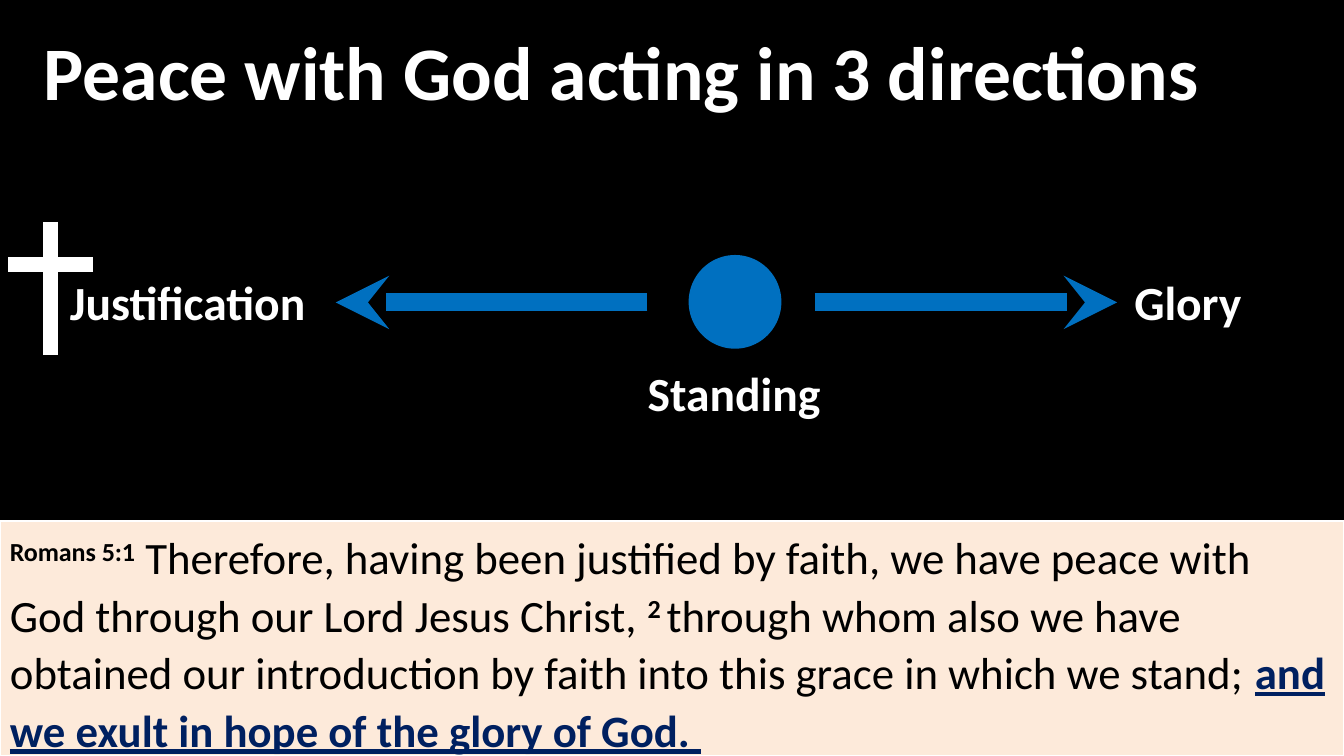
from lxml.etree import SubElement
from pptx import Presentation
from pptx.dml.color import RGBColor
from pptx.enum.shapes import MSO_CONNECTOR, MSO_SHAPE
from pptx.enum.text import MSO_ANCHOR, PP_ALIGN
from pptx.oxml.ns import qn
from pptx.util import Inches, Pt

BLACK = RGBColor(0x00, 0x00, 0x00)
WHITE = RGBColor(0xFF, 0xFF, 0xFF)
BLUE = RGBColor(0x00, 0x70, 0xC0)
NAVY = RGBColor(0x00, 0x20, 0x60)
PEACH = RGBColor(0xFD, 0xEA, 0xDA)


def add_run(paragraph, text, size, color, superscript=False, **font_format):
    run = paragraph.add_run()
    run.text = text
    run.font.color.rgb = color
    for name, value in {"name": "Calibri", "size": Pt(size), **font_format}.items():
        setattr(run.font, name, value)
    if superscript:
        run.font._element.set("baseline", "30000")


def add_line(start, end, color, width, arrow=False):
    line = slide.shapes.add_connector(
        MSO_CONNECTOR.STRAIGHT, *(Inches(v) for v in (*start, *end)))
    line.line.color.rgb = color
    line.line.width = Pt(width)
    if arrow:
        SubElement(line.line._get_or_add_ln(), qn("a:tailEnd"), type="stealth")
    SubElement(line._element.spPr, qn("a:effectLst"))


prs = Presentation()
prs.slide_width, prs.slide_height = Inches(13.33), Inches(7.5)
slide = prs.slides.add_slide(prs.slide_layouts[6])
slide.background.fill.solid()
slide.background.fill.fore_color.rgb = BLACK

# Title
title = slide.shapes.add_textbox(Inches(0), Inches(0.25), Inches(12.33), Inches(0.9))
title.text_frame.word_wrap = True
title.text_frame.vertical_anchor = MSO_ANCHOR.MIDDLE
heading = title.text_frame.paragraphs[0]
heading.alignment = PP_ALIGN.CENTER
add_run(heading, "Peace with God acting in 3 directions", 54, WHITE, bold=True)

# Scripture panel
panel = slide.shapes.add_shape(
    MSO_SHAPE.RECTANGLE, Inches(0), Inches(5.17), Inches(13.33), Inches(2.33))
panel.shadow.inherit = False
panel.fill.solid()
panel.fill.fore_color.rgb = PEACH
panel.line.color.rgb = WHITE
panel.line.width = Pt(1.5)
panel.text_frame.word_wrap = True
panel.text_frame.vertical_anchor = MSO_ANCHOR.TOP
verse = panel.text_frame.paragraphs[0]
verse.alignment = PP_ALIGN.LEFT
verse.line_spacing = 1.07
for text, color, style in [
    ("Romans 5:1", BLACK, {"superscript": True, "bold": True}),
    (" Therefore, having been justified by faith, we have peace with God "
     "through our Lord Jesus Christ, ", BLACK, {"bold": False}),
    ("2 ", BLACK, {"superscript": True, "bold": True}),
    ("through whom also we have obtained our introduction by faith into this "
     "grace in which we stand; ", BLACK, {"bold": False}),
    ("and we exult in hope of the glory of God. ", NAVY,
     {"bold": True, "underline": True}),
]:
    add_run(verse, text, 32, color, **style)

# Arrows pointing back and forward from the present
for start, end in [((6.42, 3), (3.33, 3)), ((8.08, 3), (11.08, 3))]:
    add_line(start, end, BLUE, 12.75, arrow=True)

# Labels
for text, left, top in [("Justification ", 0.5, 2.62),
                        ("Glory ", 10.42, 2.62),
                        ("Standing ", 5.92, 3.52)]:
    label = slide.shapes.add_shape(
        MSO_SHAPE.ROUNDED_RECTANGULAR_CALLOUT,
        Inches(left), Inches(top), Inches(2.83), Inches(0.75))
    for index, value in enumerate((-0.22, 0.5, 0.17)):
        label.adjustments[index] = value
    label.shadow.inherit = False
    label.fill.background()
    label.line.fill.background()
    label.text_frame.word_wrap = True
    label.text_frame.vertical_anchor = MSO_ANCHOR.MIDDLE
    caption = label.text_frame.paragraphs[0]
    caption.alignment = PP_ALIGN.CENTER
    add_run(caption, text, 34, WHITE, bold=True)

# Present standing
present = slide.shapes.add_shape(
    MSO_SHAPE.OVAL, Inches(6.83), Inches(2.53), Inches(0.92), Inches(0.93))
present.shadow.inherit = False
present.fill.solid()
present.fill.fore_color.rgb = BLUE
present.line.fill.background()

# Cross
for start, end in [((0.5, 2.2), (0.5, 3.52)), ((0.92, 2.62), (0.08, 2.62))]:
    add_line(start, end, WHITE, 10.75)

prs.save("out.pptx")
